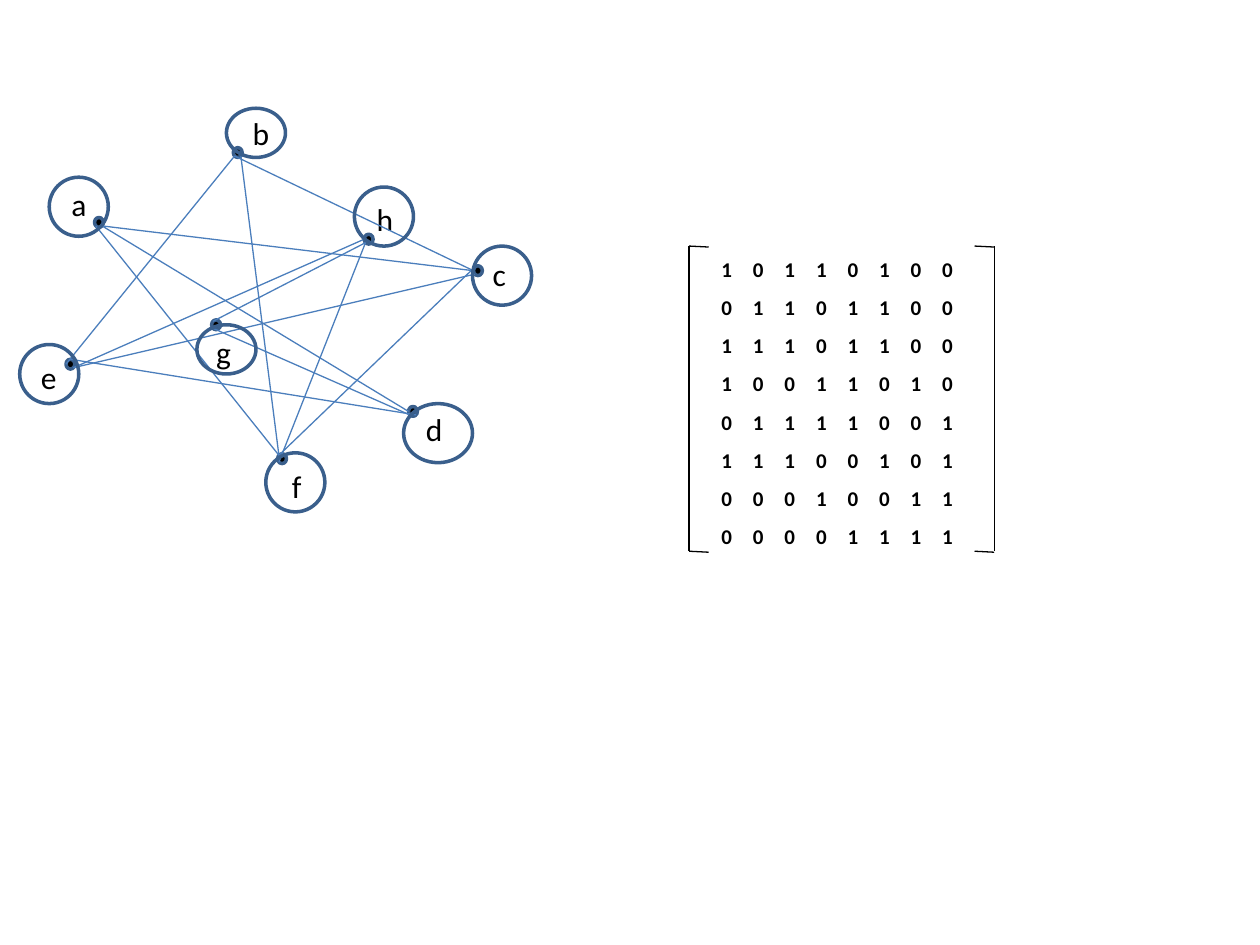
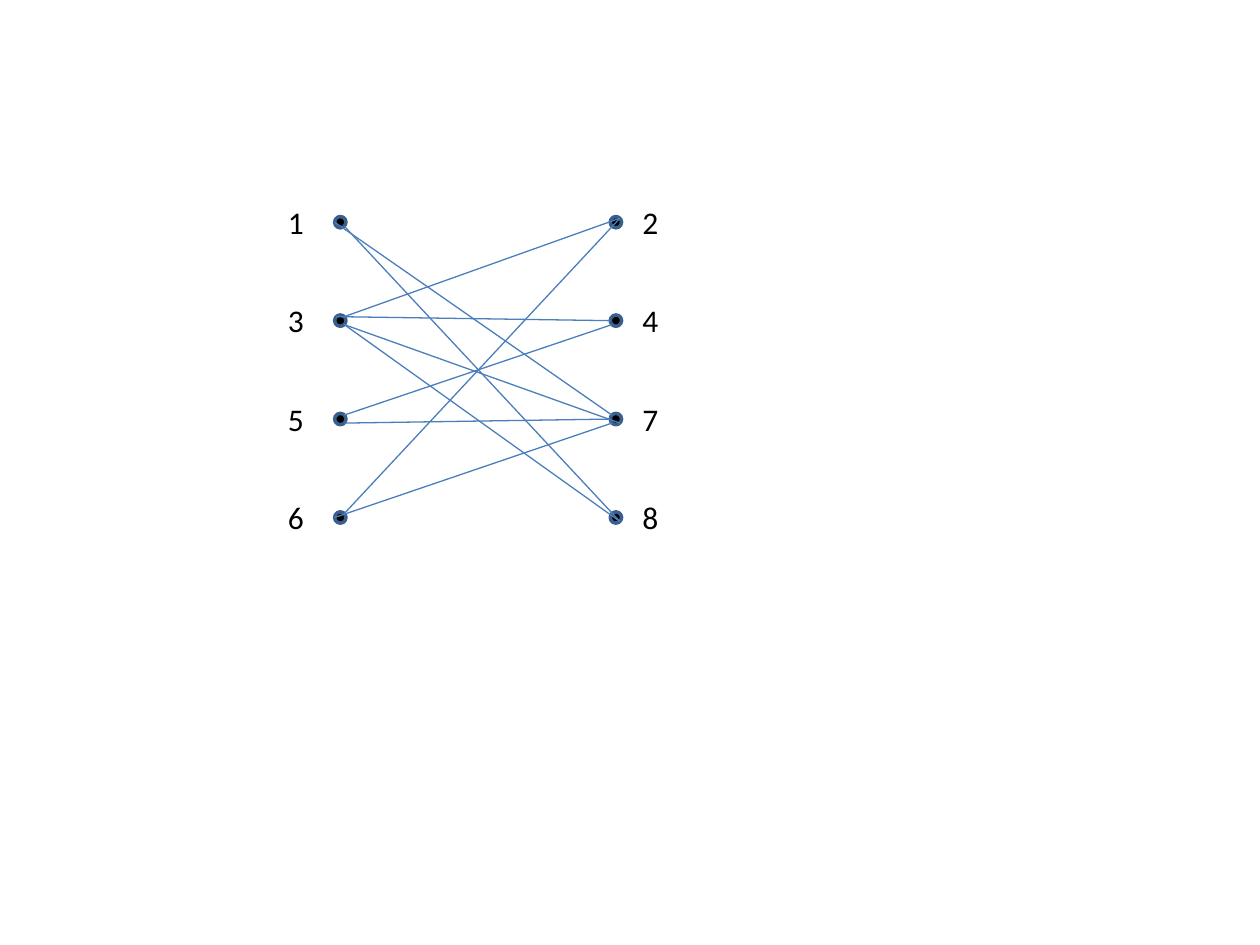
from math import cos, radians, sin
from typing import NamedTuple

from lxml.etree import SubElement
from pptx import Presentation
from pptx.dml.color import RGBColor
from pptx.enum.shapes import MSO_CONNECTOR as Connector, MSO_SHAPE as Preset
from pptx.enum.text import MSO_AUTO_SIZE as AutoSize
from pptx.oxml.ns import qn
from pptx.shapes.shapetree import GroupShapes, SlideShapes
from pptx.util import Emu, Inches, Pt

SLIDE_WIDTH, SLIDE_HEIGHT = Inches(10), Inches(7.5)
GRID_COLUMNS = 128
UNIT = SLIDE_WIDTH / GRID_COLUMNS

FONT = "Calibri"
BLACK, WHITE = "000000", "FFFFFF"
OUTLINE, EDGE = "3A5F8C", "4B7EBC"
THIN, THICK = 0.75, 2

COMPASS = {"E": 0, "SE": 45, "S": 90, "SW": 135, "W": 180, "NW": 225, "N": 270, "NE": 315}


class Point(NamedTuple):
    x: float
    y: float


class Box(NamedTuple):
    """Left, top, width and height in grid units."""
    left: float
    top: float
    width: float
    height: float

    def rim(self, direction: str) -> Point:
        """Point on the inscribed ellipse in a compass direction."""
        angle = radians(COMPASS[direction])
        return Point(self.left + self.width / 2 * (1 + cos(angle)),
                     self.top + self.height / 2 * (1 + sin(angle)))


class Node(NamedTuple):
    name: str
    dot: Box
    label: Box
    ring: Box | None = None


class Edge(NamedTuple):
    start: str
    start_side: str
    end: str
    end_side: str


def ringed(name: str, dot: Point, label: Point, ring: Box, label_width: float = 5.1) -> Node:
    return Node(name, Box(*dot, 0.9, 1), Box(*label, label_width, 4.1), ring)


LETTER_NODES = [
    ringed("a", Point(9.6, 22.1), Point(6, 18.2), Box(5, 18, 6, 6)),
    ringed("b", Point(23.7, 15), Point(24.4, 11), Box(23, 11, 6, 5)),
    ringed("c", Point(48.1, 27), Point(48.8, 25.3), Box(48, 25, 6, 6)),
    ringed("d", Point(41.5, 41.3), Point(42, 41), Box(41, 41, 7, 6), 4.5),
    ringed("e", Point(6.7, 36.5), Point(2.9, 35.7), Box(2, 35, 6, 6), 3),
    ringed("f", Point(28.2, 46.1), Point(28.4, 46.8), Box(27, 46, 6, 6), 4.1),
    ringed("g", Point(21.5, 32.5), Point(20.7, 33.2), Box(20, 33, 6, 5), 3),
    ringed("h", Point(37, 23.8), Point(37, 19.7), Box(36, 19, 6, 6)),
]
LETTER_EDGES = [
    Edge("a", "SE", "c", "W"), Edge("a", "SE", "d", "W"), Edge("a", "SW", "f", "NW"),
    Edge("b", "SW", "e", "W"), Edge("b", "SE", "f", "NW"), Edge("b", "SW", "c", "W"),
    Edge("c", "SW", "e", "SE"), Edge("c", "NW", "f", "NW"), Edge("d", "SE", "e", "N"),
    Edge("g", "SW", "d", "SW"), Edge("e", "SE", "h", "W"), Edge("f", "SW", "h", "SW"),
    Edge("g", "NW", "h", "SW"),
]
MATRIX = [
    "10110100",
    "01101100",
    "11101100",
    "10011010",
    "01111001",
    "11100101",
    "00010011",
    "00001111",
]

FIRST_ROW, ROW_STEP, DOT_SIZE = 22, 10, 1.15
NUMBER_EDGES = [
    Edge("1", "W", "7", "NW"), Edge("1", "SE", "8", "SE"), Edge("3", "NE", "2", "NE"),
    Edge("3", "NW", "4", "W"), Edge("3", "SE", "7", "SE"), Edge("3", "SE", "8", "SE"),
    Edge("5", "NE", "4", "SW"), Edge("5", "SE", "7", "W"), Edge("6", "W", "7", "SW"),
    Edge("6", "NE", "2", "NE"),
]


def color(value: str) -> RGBColor:
    return RGBColor.from_string(value)


def units(*values: float) -> list[Emu]:
    return [Emu(round(value * UNIT)) for value in values]


def add_line(shapes: GroupShapes, start: Point, end: Point, line_color: str) -> None:
    line = shapes.add_connector(Connector.STRAIGHT, *units(*start, *end))
    line.line.color.rgb = color(line_color)
    line.line.width = Pt(THIN)
    SubElement(line._element.spPr, qn("a:effectLst"))


def add_ellipse(shapes: GroupShapes, box: Box, fill: str | None = None) -> None:
    ellipse = shapes.add_shape(Preset.OVAL, *units(*box))
    ellipse.shadow.inherit = False
    if fill:
        ellipse.fill.solid()
        ellipse.fill.fore_color.rgb = color(fill)
    else:
        ellipse.fill.background()
    ellipse.line.color.rgb = color(OUTLINE)
    ellipse.line.width = Pt(THICK)


def style_paragraph(paragraph, size: float, bold: bool = False) -> None:
    font = paragraph.font
    font.name, font.size, font.bold = FONT, Pt(size), bold
    font.color.rgb = color(BLACK)


def add_label(shapes: GroupShapes, text: str, box: Box) -> None:
    frame = shapes.add_textbox(*units(*box)).text_frame
    frame.word_wrap = True
    frame.auto_size = AutoSize.SHAPE_TO_FIT_TEXT
    frame.text = text
    style_paragraph(frame.paragraphs[0], 18)


def add_graph(slide_shapes: SlideShapes, nodes: list[Node], edges: list[Edge]) -> None:
    shapes = slide_shapes.add_group_shape().shapes
    dots = {node.name: node.dot for node in nodes}
    for node in nodes:
        add_ellipse(shapes, node.dot, BLACK)
        add_label(shapes, node.name, node.label)
    for edge in edges:
        add_line(shapes, dots[edge.start].rim(edge.start_side),
                 dots[edge.end].rim(edge.end_side), EDGE)
    for node in nodes:
        if node.ring:
            add_ellipse(shapes, node.ring)


def add_matrix(shapes: SlideShapes, matrix: list[str], left: float, top: float) -> None:
    column_width, row_height = 3.21, 3.84
    row_count, column_count = len(matrix), len(matrix[0])
    table = shapes.add_table(row_count, column_count, *units(
        left, top, column_count * column_width, row_count * row_height)).table
    for row, digits in zip(table.rows, matrix):
        for cell, digit in zip(row.cells, digits):
            cell.text = digit
            cell.fill.solid()
            cell.fill.fore_color.rgb = color(WHITE)
            style_paragraph(cell.text_frame.paragraphs[0], 12, bold=True)


def add_bracket(slide_shapes: SlideShapes, spine: float, tip: float) -> None:
    """Square bracket with a vertical spine and two slightly slanted ticks."""
    top, bottom, slant = 25, 56, 0.1
    shapes = slide_shapes.add_group_shape().shapes
    add_line(shapes, Point(spine, top), Point(spine, bottom), BLACK)
    for y in (top, bottom):
        add_line(shapes, Point(min(spine, tip), y), Point(max(spine, tip), y + slant), BLACK)


def column_nodes(names: str, dot_left: float, label_left: float) -> list[Node]:
    nodes = []
    for index, name in enumerate(names):
        top = FIRST_ROW + index * ROW_STEP
        nodes.append(Node(name, Box(dot_left, top, DOT_SIZE, DOT_SIZE),
                          Box(label_left, top - 2, 5, 5.1)))
    return nodes


def main() -> None:
    presentation = Presentation()
    presentation.slide_width, presentation.slide_height = SLIDE_WIDTH, SLIDE_HEIGHT
    blank = presentation.slide_layouts[6]

    matrix_shapes = presentation.slides.add_slide(blank).shapes
    add_matrix(matrix_shapes, MATRIX, left=72, top=25.5)
    add_bracket(matrix_shapes, spine=70, tip=72)
    add_bracket(matrix_shapes, spine=101, tip=99)
    add_graph(matrix_shapes, LETTER_NODES, LETTER_EDGES)

    bipartite_shapes = presentation.slides.add_slide(blank).shapes
    number_nodes = column_nodes("1356", 34, 28) + column_nodes("2478", 62, 64)
    add_graph(bipartite_shapes, number_nodes, NUMBER_EDGES)

    presentation.save("out.pptx")


if __name__ == "__main__":
    main()
